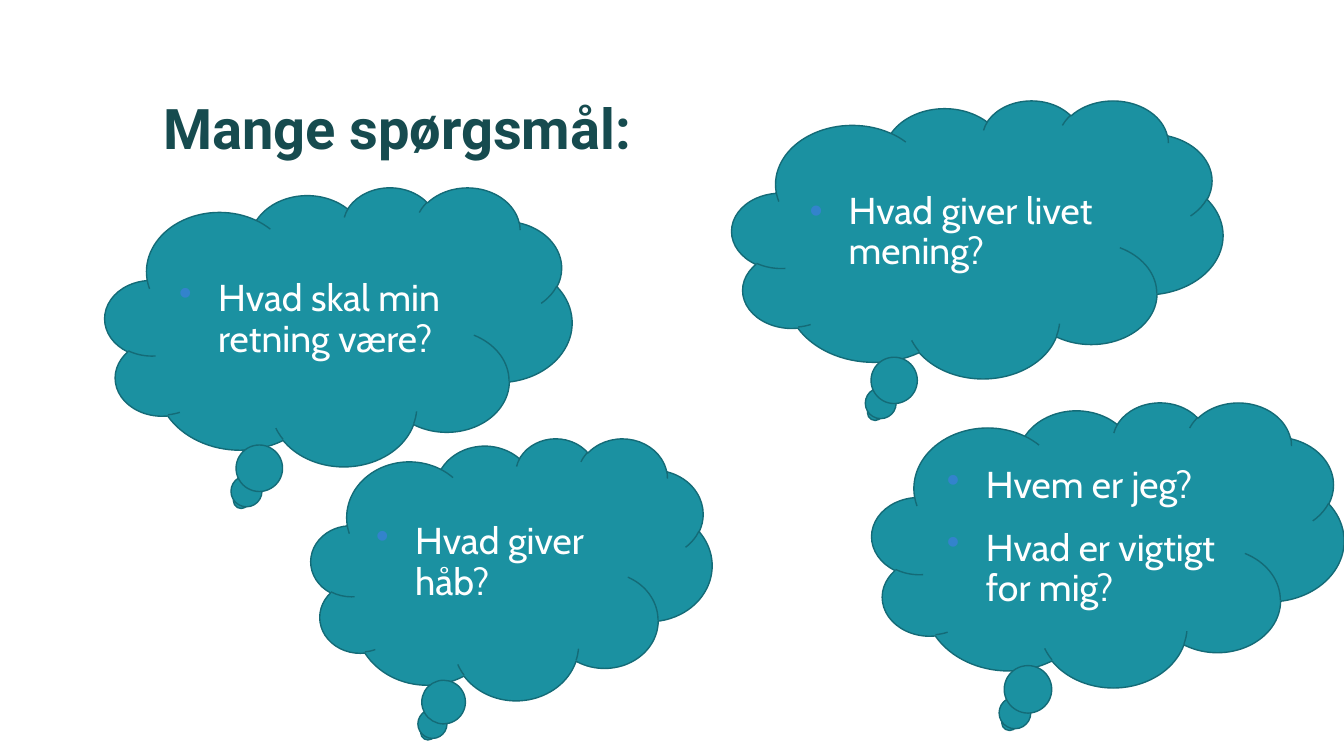
from lxml import etree
from pptx import Presentation
from pptx.dml.color import RGBColor
from pptx.enum.shapes import MSO_SHAPE
from pptx.enum.text import MSO_ANCHOR, MSO_AUTO_SIZE, PP_ALIGN
from pptx.oxml.ns import qn
from pptx.util import Pt

CLOUD = MSO_SHAPE.CLOUD_CALLOUT
LEFT = PP_ALIGN.LEFT
MIDDLE, BOTTOM = MSO_ANCHOR.MIDDLE, MSO_ANCHOR.BOTTOM
NO_AUTOFIT = MSO_AUTO_SIZE.NONE

DARK_TEAL = RGBColor(0x16, 0x4B, 0x4F)
CLOUD_TEAL = RGBColor(0x1B, 0x91, 0xA1)
EDGE_TEAL = RGBColor(0x14, 0x6B, 0x77)
BULLET_BLUE = RGBColor(0x33, 0x83, 0xCC)
WHITE = RGBColor(0xFF, 0xFF, 0xFF)

EMU_PER_PX = 914400 / 100.8
HANGING_INDENT = 39

TITLE_FONT = {"name": "Roboto", "size": Pt(40), "bold": True}
QUESTION_FONT = {"name": "Cabin", "size": Pt(26.7), "bold": False}

# Further clouds, back to front: place in px and questions
CLOUDS = [
    ((872, 402, 472, 285), ["Hvem er jeg?", "Hvad er vigtigt for mig?"]),
    ((105, 187, 467, 279), ["Hvad skal min retning være?"]),
    ((311, 438, 401, 262), ["Hvad giver håb?"]),
]


def px(length):
    return round(length * EMU_PER_PX)


def place(shape, box):
    for side, length in zip(("left", "top", "width", "height"), box):
        setattr(shape, side, px(length))


def format_frame(frame, anchor):
    settings = {"word_wrap": True, "auto_size": NO_AUTOFIT,
                "vertical_anchor": anchor}
    for name, value in settings.items():
        setattr(frame, name, value)


def format_paragraph(paragraph, font, color, space_before=0):
    settings = {"alignment": LEFT, "line_spacing": 0.9,
                "space_before": Pt(space_before), "space_after": Pt(0)}
    for name, value in settings.items():
        setattr(paragraph, name, value)
    for name, value in font.items():
        setattr(paragraph.font, name, value)
    paragraph.font.color.rgb = color


def add_bullet(paragraph):
    props = paragraph._p.get_or_add_pPr()
    props.set("marL", str(px(HANGING_INDENT)))
    props.set("indent", str(-px(HANGING_INDENT)))
    bullet_color = etree.SubElement(props, qn("a:buClr"))
    etree.SubElement(bullet_color, qn("a:srgbClr"), val=str(BULLET_BLUE))
    etree.SubElement(props, qn("a:buChar"), char="•")


def fill_title(title, text, box):
    place(title, box)
    title.text_frame.text = text
    format_frame(title.text_frame, BOTTOM)
    format_paragraph(title.text_frame.paragraphs[0], TITLE_FONT, DARK_TEAL)


def format_cloud(cloud, questions):
    cloud.fill.solid()
    cloud.fill.fore_color.rgb = CLOUD_TEAL
    cloud.line.color.rgb = EDGE_TEAL
    cloud.line.width = Pt(1)
    cloud.shadow.inherit = False
    frame = cloud.text_frame
    frame.text = "\n".join(questions)
    format_frame(frame, MIDDLE)
    for index, paragraph in enumerate(frame.paragraphs):
        add_bullet(paragraph)
        format_paragraph(paragraph, QUESTION_FONT, WHITE, 16 if index else 0)


def shape_body_as_cloud(body, box):
    place(body, box)
    outline = etree.SubElement(body._element.spPr, qn("a:prstGeom"),
                               prst="cloudCallout")
    etree.SubElement(outline, qn("a:avLst"))


def main():
    prs = Presentation()
    prs.slide_width, prs.slide_height = px(1344), px(756)
    slide = prs.slides.add_slide(prs.slide_layouts[1])

    # Heading
    fill_title(slide.shapes.title, "Mange spørgsmål:", (153, 82, 1111, 85))

    # Body placeholder as the first thought cloud
    meaning = slide.placeholders[1]
    shape_body_as_cloud(meaning, (732, 100, 491, 278))
    format_cloud(meaning, ["Hvad giver livet mening?"])

    # Remaining thought clouds
    for box, questions in CLOUDS:
        cloud = slide.shapes.add_shape(CLOUD, *map(px, box))
        format_cloud(cloud, questions)

    prs.save("out.pptx")


if __name__ == "__main__":
    main()
